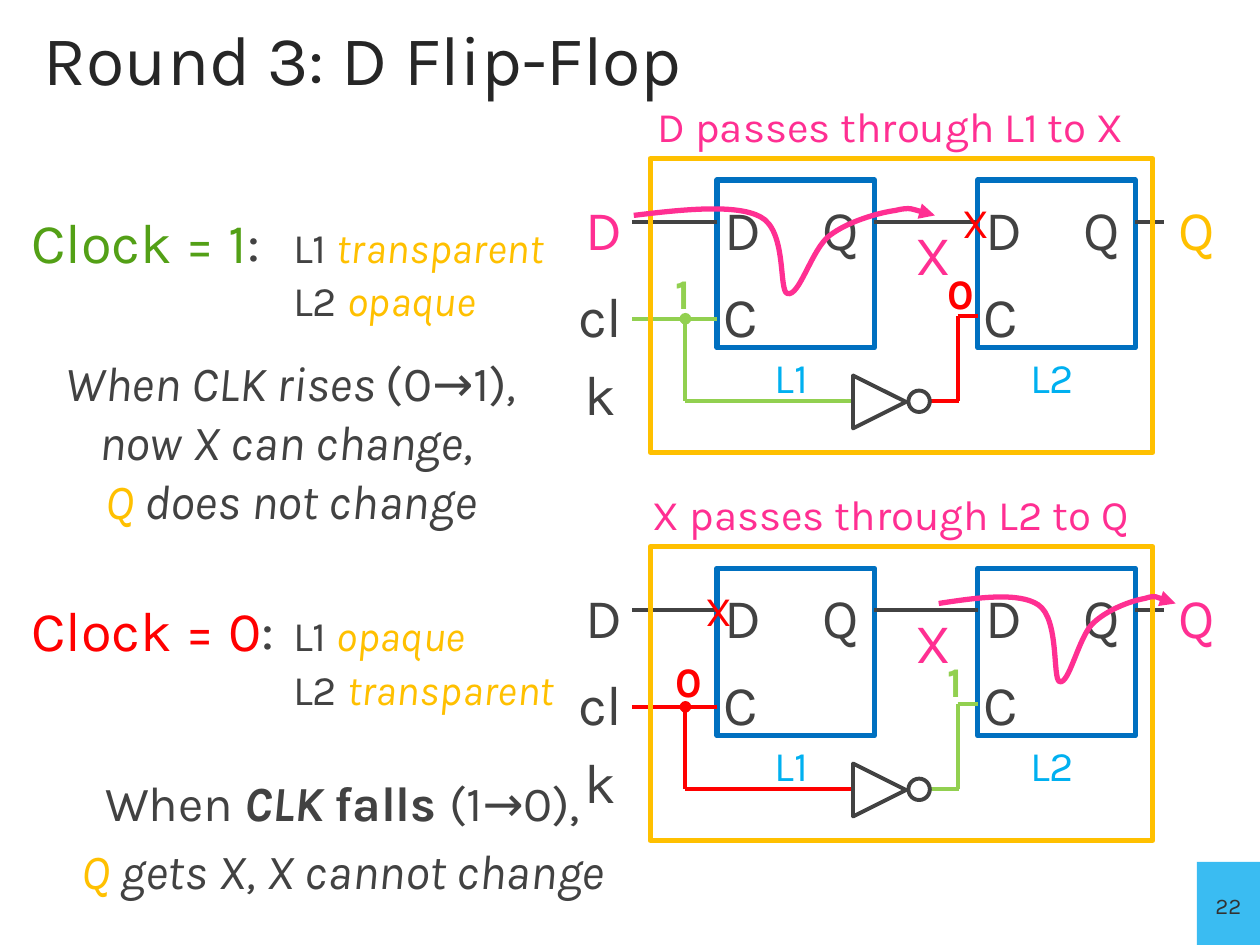
from dataclasses import dataclass
from typing import NamedTuple

from lxml.etree import SubElement
from pptx import Presentation
from pptx.dml.color import RGBColor
from pptx.enum.shapes import MSO_AUTO_SHAPE_TYPE as Preset, MSO_CONNECTOR_TYPE as Connector
from pptx.enum.text import MSO_ANCHOR as Anchor, PP_PARAGRAPH_ALIGNMENT as Align
from pptx.oxml.ns import qn
from pptx.util import Inches, Pt

INK = RGBColor(0x42, 0x42, 0x42)
TITLE_INK = RGBColor(0x26, 0x26, 0x26)
NUMBER_INK = RGBColor(0x32, 0x32, 0x32)
GREEN = RGBColor(0x92, 0xD0, 0x50)
DARK_GREEN = RGBColor(0x53, 0xA0, 0x16)
RED = RGBColor(0xFF, 0x00, 0x00)
PINK = RGBColor(0xFF, 0x2F, 0x92)
AMBER = RGBColor(0xFF, 0xC0, 0x00)
BLUE = RGBColor(0x00, 0x70, 0xC0)
SKY = RGBColor(0x00, 0xB0, 0xF0)
CORNER_BLUE = RGBColor(0x3A, 0xBC, 0xF2)

FONT = "Karla"
ROW_STEP = 3.08
LATCHES = {"L1": 5.69, "L2": 7.76}
# Signal curve: horizontal position as a share of its width, height in inches
SIGNAL = [(0, 1.71), (0.17, 1.66), (0.34, 1.62), (0.42, 1.72),
          (0.51, 1.83), (0.48, 2.31), (0.51, 2.33), (0.55, 2.36), (0.59, 1.98), (0.65, 1.87),
          (0.71, 1.76), (0.81, 1.69), (0.87, 1.67), (0.92, 1.64), (1, 1.71), (1, 1.71)]


class Run(NamedTuple):
    text: str
    size: float
    color: RGBColor = INK
    bold: bool = False
    italic: bool = False


class Box(NamedTuple):
    left: float
    top: float
    width: float
    height: float

    def lengths(self) -> list:
        return [Inches(value) for value in self]


@dataclass
class ClockState:
    """One clock level: its latch modes, its signal path and its colours."""
    top: float
    level: str
    heading_color: RGBColor
    clock_color: RGBColor
    inverse_color: RGBColor
    latch_modes: tuple[str, str]
    caption: str
    d_color: RGBColor
    q_color: RGBColor
    signal_start: float
    signal_width: float
    blocked_left: float


STATES = [
    ClockState(0, "1", DARK_GREEN, GREEN, RED, ("transparent", "opaque"),
               "D passes through L1 to X", PINK, AMBER, 5.03, 2.39, 7.54),
    ClockState(ROW_STEP, "0", RED, RED, GREEN, ("opaque", "transparent"),
               "X passes through L2 to Q", INK, PINK, 7.45, 1.88, 5.5),
]


def fill_text(frame, paragraphs: list[list[Run]], frame_format: dict, paragraph_format: dict) -> None:
    for name, value in frame_format.items():
        setattr(frame, name, value)
    for index, runs in enumerate(paragraphs):
        paragraph = frame.paragraphs[0] if index == 0 else frame.add_paragraph()
        for name, value in paragraph_format.items():
            setattr(paragraph, name, value)
        for part in runs:
            run = paragraph.add_run()
            run.text = part.text
            font_format = {"name": FONT, "size": Pt(part.size), "bold": part.bold, "italic": part.italic}
            for name, value in font_format.items():
                setattr(run.font, name, value)
            run.font.color.rgb = part.color


def add_text(shapes, box: Box, paragraphs: list[list[Run]], wrap: bool = False,
             frame_format: dict | None = None, **paragraph_format):
    frame = shapes.add_textbox(*box.lengths()).text_frame
    fill_text(frame, paragraphs, {"word_wrap": wrap} | (frame_format or {}), paragraph_format)
    return frame


def add_label(shapes, box: Box, text: str, color: RGBColor = INK, size: float = 32, wrap: bool = False) -> None:
    add_text(shapes, box, [[Run(text, size, color)]], wrap, alignment=Align.CENTER, line_spacing=1.16)


def add_outline(shapes, preset: Preset, box: Box, color: RGBColor, weight: float, rotation: float = 0) -> None:
    outline = shapes.add_shape(preset, *box.lengths())
    outline.shadow.inherit = False
    outline.rotation = rotation
    outline.fill.background()
    outline.line.color.rgb = color
    outline.line.width = Pt(weight)


def add_wire(shapes, start: tuple[float, float], end: tuple[float, float], color: RGBColor, dot: bool = False) -> None:
    wire = shapes.add_connector(Connector.STRAIGHT, *map(Inches, start + end))
    wire.line.color.rgb = color
    wire.line.width = Pt(2.25)
    if dot:
        SubElement(wire.line._get_or_add_ln(), qn("a:headEnd"), type="oval")
    SubElement(wire._element.spPr, qn("a:effectLst"))


def add_signal(shapes, start: float, width: float, top: float) -> None:
    """Draw the smooth arrow that follows the value through the open latch."""
    points = [(Inches(start + share * width), Inches(top + y)) for share, y in SIGNAL]
    builder = shapes.build_freeform(*points[0], scale=1.0)
    builder.add_line_segments(points[1:], close=False)
    signal = builder.convert_to_shape()
    signal.shadow.inherit = False
    signal.fill.background()
    signal.line.color.rgb = PINK
    signal.line.width = Pt(3)
    SubElement(signal.line._get_or_add_ln(), qn("a:tailEnd"), type="triangle")
    # Each three straight segments become one cubic curve
    outline = signal._element.find(".//" + qn("a:path"))
    for index, segment in enumerate(outline.findall(qn("a:lnTo"))):
        if index % 3 == 0:
            curve = SubElement(outline, qn("a:cubicBezTo"))
        curve.append(segment[0])
        outline.remove(segment)


def add_heading(shapes, state: ClockState) -> None:
    first, second = state.latch_modes
    frame = add_text(shapes, Box(0.15, state.top + 1.6, 4.56, 1.04), [
        [Run(f"Clock = {state.level}", 32, state.heading_color), Run(":", 32),
         Run("\t L1 ", 24), Run(first, 24, AMBER, italic=True)],
        [Run("\t L2 ", 24), Run(second, 24, AMBER, italic=True)],
    ], wrap=True)
    for paragraph in frame.paragraphs:
        tabs = SubElement(paragraph._p.get_or_add_pPr(), qn("a:tabLst"))
        SubElement(tabs, qn("a:tab"), pos=str(Inches(2)), algn="l")


def add_circuit(shapes, state: ClockState) -> None:
    top, clock, inverse = state.top, state.clock_color, state.inverse_color
    data_y, clock_y, inverse_y, inverter_y = (top + y for y in (1.76, 2.53, 2.51, 3.18))

    for name, left in LATCHES.items():
        add_outline(shapes, Preset.RECTANGLE, Box(left, top + 1.43, 1.25, 1.33), BLUE, 3)
        add_label(shapes, Box(left - 0.06, top + 1.41, 0.53, 0.73), "D")
        add_label(shapes, Box(left + 0.71, top + 1.41, 0.55, 0.73), "Q")
        add_label(shapes, Box(left - 0.08, top + 2.1, 0.53, 0.67), "C")
        add_label(shapes, Box(left + 0.3, top + 2.68, 0.58, 0.57), name, SKY, 24)

    for start, end in ((5.02, 5.69), (6.94, 7.76), (9.01, 9.24)):
        add_wire(shapes, (start, data_y), (end, data_y), INK)
    add_wire(shapes, (5.02, clock_y), (5.69, clock_y), clock)
    add_wire(shapes, (5.44, clock_y), (5.44, inverter_y), clock, dot=True)
    add_wire(shapes, (5.44, inverter_y), (6.77, inverter_y), clock)
    add_wire(shapes, (7.39, inverter_y), (7.61, inverter_y), inverse)
    add_wire(shapes, (7.6, inverter_y), (7.6, inverse_y), inverse)
    add_wire(shapes, (7.6, inverse_y), (7.76, inverse_y), inverse)
    add_outline(shapes, Preset.ISOSCELES_TRIANGLE, Box(6.77, top + 2.98, 0.42, 0.42), INK, 2.25, rotation=90)
    add_outline(shapes, Preset.OVAL, Box(7.21, top + 3.1, 0.17, 0.17), INK, 2.25)
    add_outline(shapes, Preset.RECTANGLE, Box(5.16, top + 1.26, 3.99, 2.33), AMBER, 3)

    add_label(shapes, Box(4.53, top + 1.41, 0.53, 0.73), "D", state.d_color)
    add_label(shapes, Box(9.22, top + 1.41, 0.55, 0.73), "Q", state.q_color)
    add_label(shapes, Box(4.41, top + 2.1, 0.71, 0.67), "clk", wrap=True)
    no_margins = dict.fromkeys(("margin_left", "margin_top", "margin_right", "margin_bottom"), 0)
    levels = ((5.36, state.level, clock), (7.52, "0" if state.level == "1" else "1", inverse))
    for left, level, color in levels:
        add_text(shapes, Box(left, top + 2.12, 0.19, 0.4), [[Run(level, 24, color, bold=True)]],
                 frame_format=no_margins)

    add_signal(shapes, state.signal_start, state.signal_width, top)
    add_label(shapes, Box(7.16, top + 1.61, 0.5, 0.73), "X", PINK)
    add_text(shapes, Box(5.07, top + 0.75, 4, 0.5), [[Run(state.caption, 24, PINK)]], alignment=Align.CENTER)
    add_text(shapes, Box(state.blocked_left, top + 1.51, 0.43, 0.5), [[Run("X", 24, RED)]])


def add_page_number(shapes) -> None:
    corner = shapes.add_shape(Preset.RECTANGLE, *Box(9.5, 6.84, 0.5, 0.66).lengths())
    corner.shadow.inherit = False
    corner.fill.solid()
    corner.fill.fore_color.rgb = CORNER_BLUE
    corner.line.fill.background()
    fill_text(corner.text_frame, [[Run("22", 16, NUMBER_INK)]],
              {"word_wrap": False, "vertical_anchor": Anchor.MIDDLE}, {"alignment": Align.CENTER})
    corner.text_frame.paragraphs[0].runs[0].font._element.set("cap", "small")


def main() -> None:
    deck = Presentation()
    deck.slide_width, deck.slide_height = Inches(10), Inches(7.5)
    shapes = deck.slides.add_slide(deck.slide_layouts[6]).shapes

    add_page_number(shapes)
    add_text(shapes, Box(0.25, 0.17, 9.5, 0.58), [[Run("Round 3: D Flip-Flop", 40, TITLE_INK)]],
             wrap=True, frame_format={"vertical_anchor": Anchor.MIDDLE})
    for state in STATES:
        add_heading(shapes, state)
        add_circuit(shapes, state)

    add_text(shapes, Box(0.19, 6.08, 5.06, 1.14), [
        [Run("When ", 28), Run("CLK ", 28, bold=True, italic=True), Run("falls ", 28, bold=True), Run("(1→0),", 28)],
        [Run("Q", 28, AMBER, italic=True), Run(" gets X, X cannot change", 28, italic=True)],
    ], wrap=True, alignment=Align.CENTER, space_before=Pt(5.6))
    add_text(shapes, Box(0.14, 2.75, 4.34, 1.51), [
        [Run("When CLK rises ", 28, italic=True), Run("(0→1)", 28), Run(",", 28, italic=True)],
        [Run("now X can change, ", 28, italic=True)],
        [Run("Q", 28, AMBER, italic=True), Run(" does not change", 28, italic=True)],
    ], alignment=Align.CENTER)
    deck.save("out.pptx")


if __name__ == "__main__":
    main()
